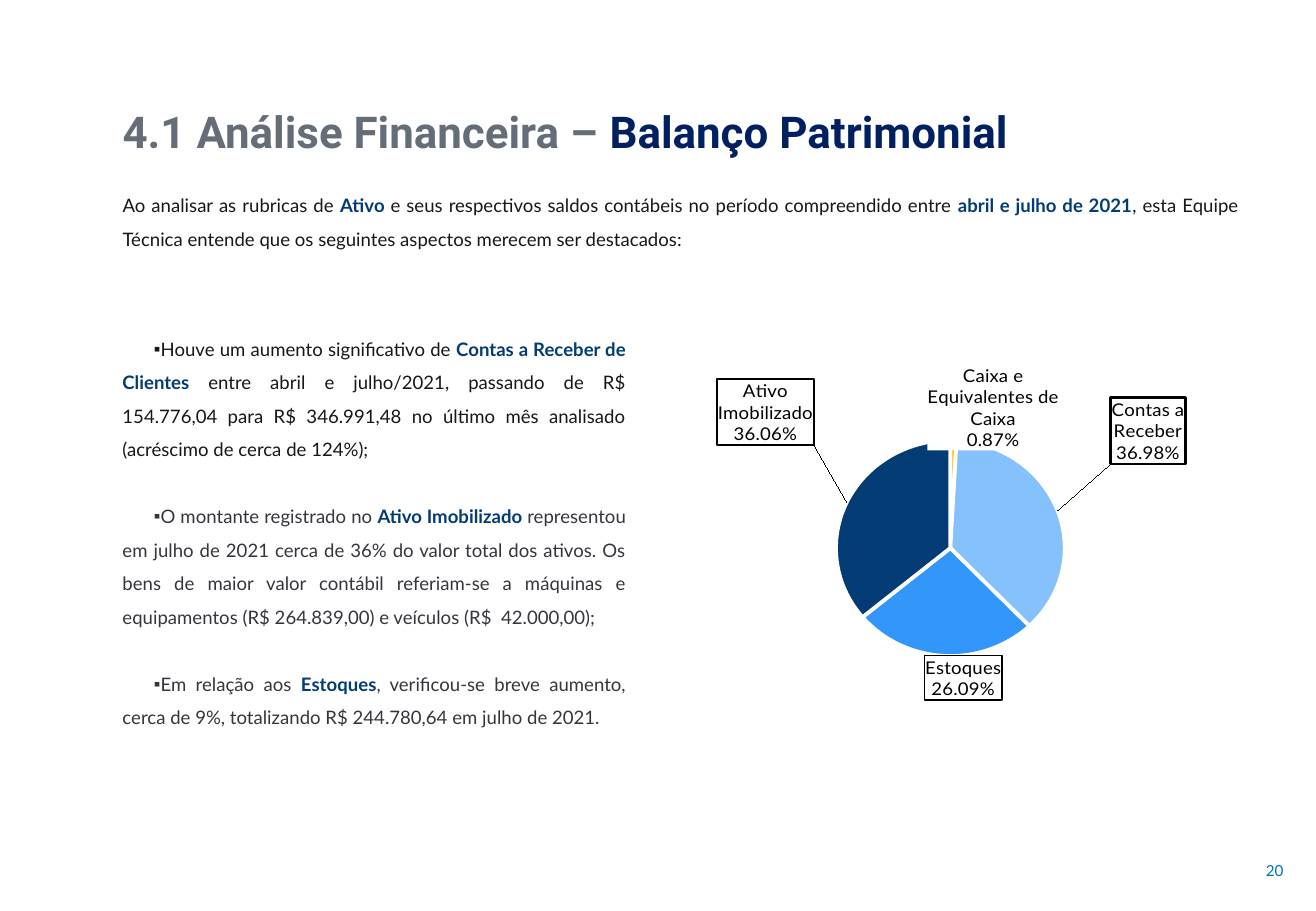
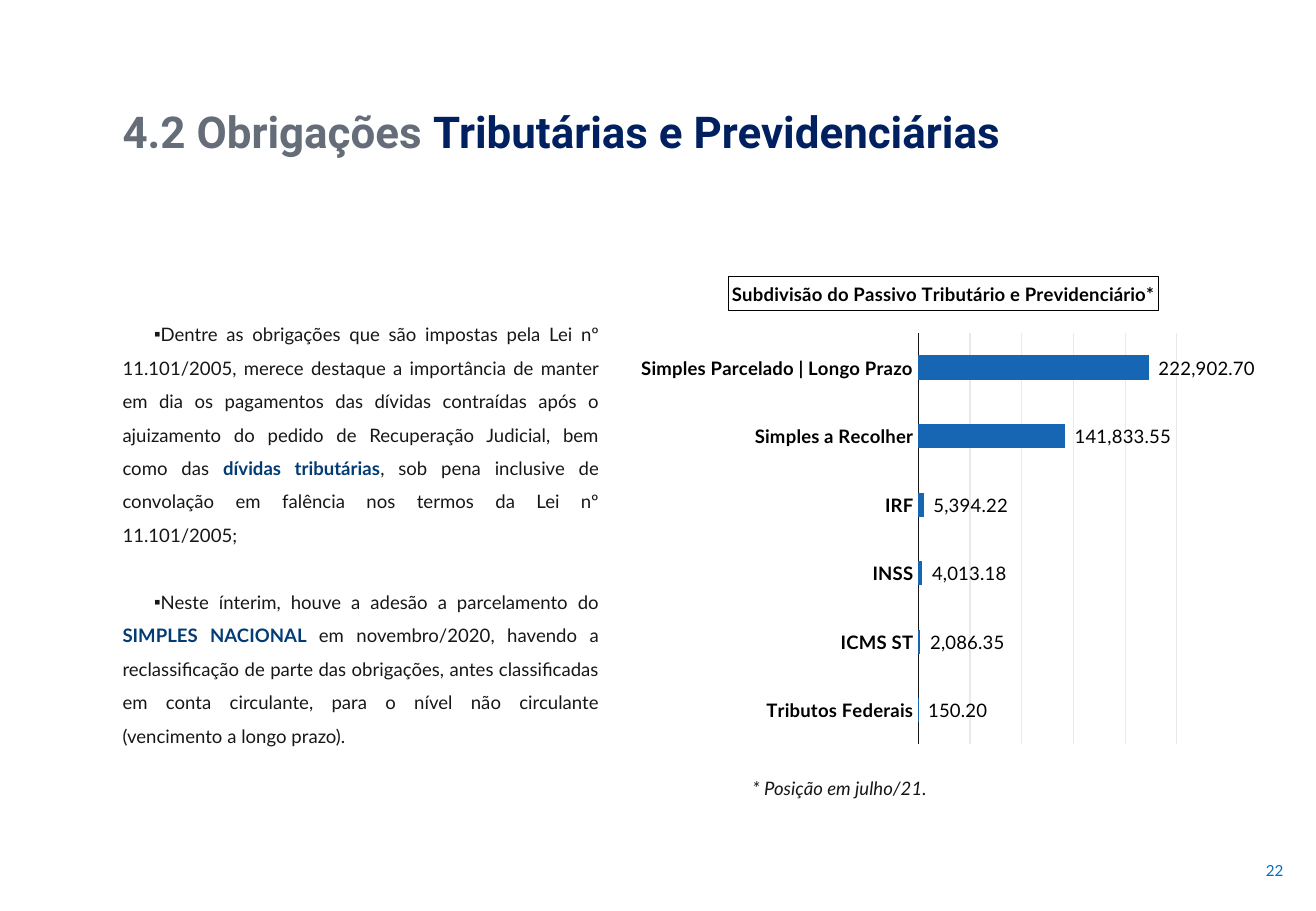
from pptx import Presentation
from pptx.chart.data import CategoryChartData
from pptx.dml.color import RGBColor
from pptx.enum.chart import XL_CHART_TYPE, XL_LABEL_POSITION, XL_TICK_MARK
from pptx.enum.text import MSO_ANCHOR, PP_ALIGN
from pptx.oxml import parse_xml
from pptx.oxml.ns import nsdecls
from pptx.util import Inches, Pt

INK, SLATE, GRAY, NAVY, DEEP = "181717", "33363C", "656D78", "033C75", "002060"
BODY = {"name": "Lato", "size": Pt(11)}
HEAD = {"name": "Roboto", "size": Pt(26), "bold": True}
PAGE = {"name": "Lato", "size": Pt(9)}
NOTE = {**BODY, "italic": True}
LABEL = {**BODY, "color": "000000"}
AXIS = {**LABEL, "bold": True}
hue = RGBColor.from_string


def style(font, form):
    for key, val in form.items():
        if key == "color":
            font.color.rgb = hue(val)
        else:
            setattr(font, key, val)


def write(slide, at, paras, form, align=PP_ALIGN.LEFT, mark=False, mid=False):
    frame = slide.shapes.add_textbox(*map(Inches, at)).text_frame
    frame.word_wrap = True
    if mid:
        frame.vertical_anchor = MSO_ANCHOR.MIDDLE
    for num, (color, accent, parts) in enumerate(paras):
        para = frame.paragraphs[0] if num == 0 else frame.add_paragraph()
        para.alignment = align
        if align == PP_ALIGN.JUSTIFY:
            para.line_spacing = 1.5
        if num:
            para.space_before = Pt(20)
        if mark:
            props = para._p.get_or_add_pPr()
            props.set("marL", "0")
            props.set("indent", str(Inches(0.26)))
            props.append(parse_xml(f'<a:buFont {nsdecls("a")} typeface="Arial"/>'))
            props.append(parse_xml(f'<a:buChar {nsdecls("a")} char="▪"/>'))
        for spot, text in enumerate(parts):
            run = para.add_run()
            run.text = text
            style(run.font, form)
            run.font.color.rgb = hue(accent if spot % 2 else color)
            if spot % 2:
                run.font.bold = True


deck = Presentation()
deck.slide_width, deck.slide_height = Inches(10.83), Inches(7.5)

pages = [
    {
        "num": "20",
        "head": ["4.1 Análise Financeira – ", "Balanço Patrimonial"],
        "box": (0.91, 2.64, 4.34, 3.4),
        "body": [
            (INK, NAVY, [
                "Houve um aumento significativo de ",
                "Contas a Receber de Clientes ",
                "entre abril e julho/2021, passando de R$ 154.776,04 para "
                "R$ 346.991,48 no último mês analisado (acréscimo de cerca de 124%);",
            ]),
            (SLATE, NAVY, [
                "O montante registrado no ",
                "Ativo Imobilizado ",
                "representou em julho de 2021 cerca de 36% do valor total dos "
                "ativos. Os bens de maior valor contábil referiam-se a máquinas e "
                "equipamentos (R$ 264.839,00) e veículos (R$  42.000,00);",
            ]),
            (SLATE, NAVY, [
                "Em relação aos ",
                "Estoques",
                ", verificou-se breve aumento, cerca de 9%, totalizando "
                "R$ 244.780,64 em julho de 2021.",
            ]),
        ],
        "kind": XL_CHART_TYPE.PIE,
        "at": (5.06, 2.86, 5.42, 2.96),
        "plot": (0.153, 0.235, 0.713, 0.636),
        "form": "0.00%",
        "data": {
            "Caixa e Equivalentes de Caixa": 0.87,
            "Contas a Receber": 36.98,
            "Estoques": 26.09,
            "Ativo Imobilizado": 36.06,
        },
    },
    {
        "num": "22",
        "head": ["4.2 Obrigações ", "Tributárias e Previdenciárias"],
        "box": (0.91, 2.52, 4.12, 3.43),
        "body": [
            (INK, NAVY, [
                "Dentre as obrigações que são impostas pela Lei nº 11.101/2005, "
                "merece destaque a importância de manter em dia os pagamentos das "
                "dívidas contraídas após o ajuizamento do pedido de Recuperação "
                "Judicial, bem como das ",
                "dívidas tributárias",
                ", sob pena inclusive de convolação em falência nos termos da "
                "Lei nº 11.101/2005;",
            ]),
            (INK, NAVY, [
                "Neste ínterim, houve a adesão a parcelamento do ",
                "SIMPLES NACIONAL ",
                "em novembro/2020, havendo a reclassificação de parte das "
                "obrigações, antes classificadas em conta circulante, para o nível "
                "não circulante (vencimento a longo prazo).",
            ]),
        ],
        "kind": XL_CHART_TYPE.BAR_CLUSTERED,
        "at": (5.17, 2.14, 5.2, 4.2),
        "plot": (0.46, 0.144, 0.41, 0.806),
        "form": "_(* #,##0.00_)",
        "data": {
            "Tributos Federais": 150.2,
            "ICMS ST": 2086.35,
            "INSS": 4013.18,
            "IRF": 5394.22,
            "Simples a Recolher": 141833.55,
            "Simples Parcelado | Longo Prazo": 222902.7,
        },
    },
]

slides, charts = [], []
for page in pages:
    slide = deck.slides.add_slide(deck.slide_layouts[6])
    write(slide, (9.87, 6.92, 0.79, 0.5), [("0070C0", NAVY, [page["num"]])],
          PAGE, PP_ALIGN.RIGHT, mid=True)
    write(slide, (0.91, 0.81, 9.71, 0.54), [(GRAY, DEEP, page["head"])], HEAD)
    write(slide, page["box"], page["body"], BODY, PP_ALIGN.JUSTIFY, mark=True)

    data = CategoryChartData()
    data.categories = list(page["data"])
    data.add_series("Series 1", list(page["data"].values()))
    frame = slide.shapes.add_chart(page["kind"], *map(Inches, page["at"]), data)
    chart = frame.chart
    style(chart.font, LABEL)
    chart.has_legend = chart.has_title = False

    area = chart._chartSpace.xpath("c:chart/c:plotArea")[0]
    for old in area.xpath("c:layout"):
        area.remove(old)
    x, y, w, h = page["plot"]
    area.insert(0, parse_xml(
        f'<c:layout {nsdecls("c")}><c:manualLayout><c:layoutTarget val="inner"/>'
        f'<c:xMode val="edge"/><c:yMode val="edge"/><c:x val="{x}"/>'
        f'<c:y val="{y}"/><c:w val="{w}"/><c:h val="{h}"/>'
        '</c:manualLayout></c:layout>'))

    tags = chart.plots[0].series[0].data_labels
    style(tags.font, LABEL)
    tags.number_format = page["form"]
    tags.number_format_is_linked = False
    tags.position = XL_LABEL_POSITION.OUTSIDE_END
    pie = page["kind"] == XL_CHART_TYPE.PIE
    tags.show_value = not pie
    tags.show_percentage = tags.show_category_name = pie
    slides.append(slide)
    charts.append(chart)

write(slides[0], (0.91, 1.46, 9.38, 0.63), [(INK, NAVY, [
    "Ao analisar as rubricas de ",
    "Ativo ",
    "e seus respectivos saldos contábeis no período compreendido entre ",
    "abril e julho de 2021",
    ", esta Equipe Técnica entende que os seguintes aspectos merecem ser destacados:",
])], BODY, PP_ALIGN.JUSTIFY)

pie, bar = charts
plot = pie.plots[0]
plot.vary_by_categories = True
ring = plot.series[0]
tags = ring.data_labels._element
slices = [
    ("FFC000", 0.06, 0.05, 0),
    ("85C1FD", 0.07, -0.13, 1.5),
    ("3296FA", 0.03, -0.02, 0.75),
    ("033C75", -0.04, -0.16, 1),
]
for num, (color, dx, dy, edge) in enumerate(slices):
    form = ring.points[num].format
    form.fill.solid()
    form.fill.fore_color.rgb = hue(color)
    form.line.color.rgb = hue("FFFFFF")
    form.line.width = Pt(2.25)
    paint = '<a:solidFill><a:srgbClr val="000000"/></a:solidFill>' if edge else "<a:noFill/>"
    tags.insert(num, parse_xml(
        f'<c:dLbl {nsdecls("c", "a")}><c:idx val="{num}"/>'
        f'<c:layout><c:manualLayout><c:x val="{dx}"/><c:y val="{dy}"/>'
        '</c:manualLayout></c:layout><c:numFmt formatCode="0.00%" sourceLinked="0"/>'
        '<c:spPr><a:solidFill><a:srgbClr val="FFFFFF"/></a:solidFill>'
        f'<a:ln w="{Pt(edge)}">{paint}</a:ln></c:spPr>'
        '<c:txPr><a:bodyPr/><a:p><a:pPr><a:defRPr sz="1100"><a:solidFill>'
        '<a:srgbClr val="000000"/></a:solidFill><a:latin typeface="Lato"/>'
        '</a:defRPr></a:pPr><a:endParaRPr lang="pt-BR"/></a:p></c:txPr>'
        '<c:dLblPos val="outEnd"/><c:showLegendKey val="0"/><c:showVal val="0"/>'
        '<c:showCatName val="1"/><c:showSerName val="0"/><c:showPercent val="1"/>'
        '<c:showBubbleSize val="0"/><c:separator>\n</c:separator></c:dLbl>'))

bar.has_title = True
title = bar.chart_title
title.text_frame.text = "Subdivisão do Passivo Tributário e Previdenciário*"
style(title.text_frame.paragraphs[0].runs[0].font, AXIS)
title.format.line.color.rgb = hue("000000")
title.format.line.width = Pt(0.75)

plot = bar.plots[0]
plot.vary_by_categories = False
plot.gap_width = 182
fill = plot.series[0].format.fill
fill.solid()
fill.fore_color.rgb = hue("1666B3")

names = bar.category_axis
style(names.tick_labels.font, AXIS)
names.major_tick_mark = XL_TICK_MARK.NONE
scale = bar.value_axis
style(scale, {"visible": False, "minimum_scale": 0, "maximum_scale": 250000,
              "major_unit": 50000, "has_major_gridlines": True})
for line, color in ((names.format.line, INK), (scale.major_gridlines.format.line, "E7E9EB")):
    line.color.rgb = hue(color)
    line.width = Pt(0.75)

write(slides[1], (5.42, 6.34, 2.98, 0.3), [(INK, NAVY, ["* Posição em julho/21."])],
      NOTE, PP_ALIGN.CENTER, mid=True)

deck.save("out.pptx")
